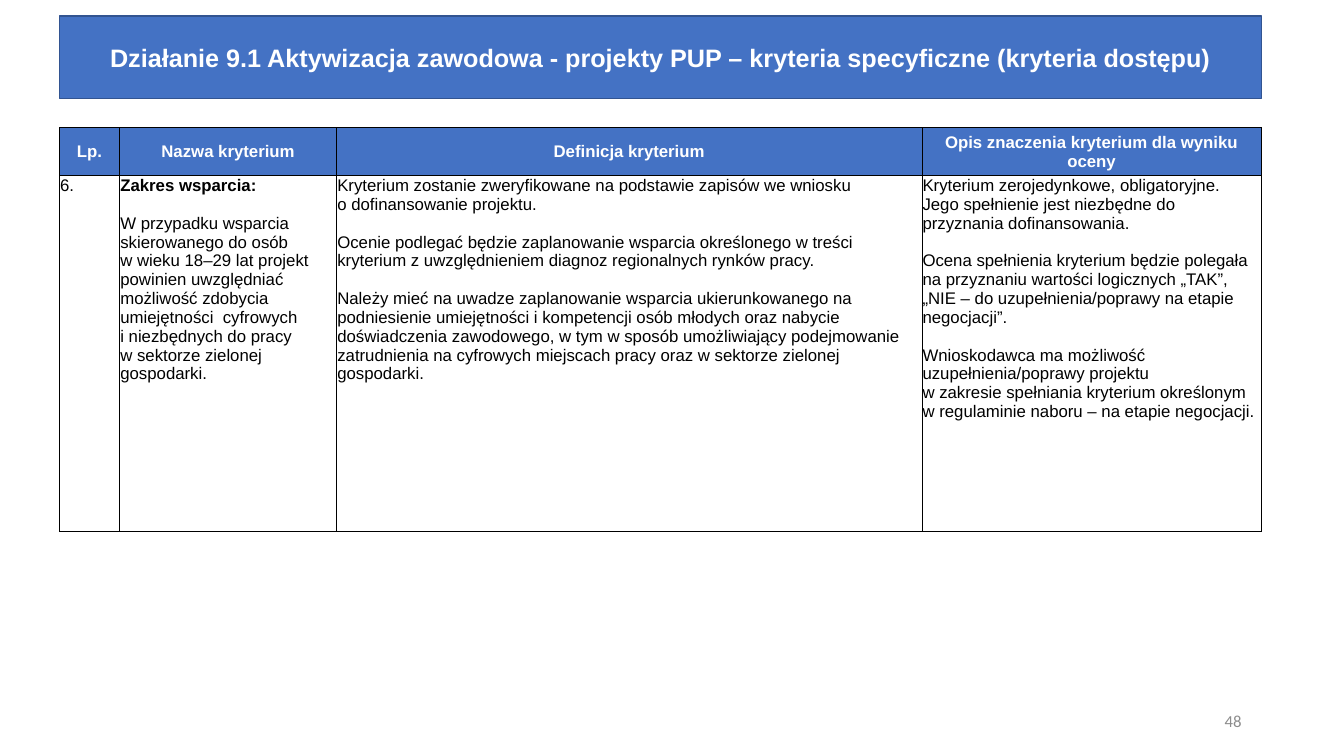
from lxml import etree
from pptx import Presentation
from pptx.dml.color import RGBColor
from pptx.enum.shapes import MSO_SHAPE as SHAPE
from pptx.enum.text import MSO_ANCHOR as ANCHOR, PP_ALIGN as ALIGN
from pptx.oxml.ns import qn
from pptx.util import Pt

BLUE, BLACK, WHITE = "4472C4", "000000", "FFFFFF"
LEFT = 42.5
COLUMNS = [43, 155, 418, 242.5]
ROWS = [34.5, 254]
PARAGRAPH_GAP = 13.5

HEADERS = ["Lp.", "Nazwa kryterium", "Definicja kryterium",
           "Opis znaczenia kryterium dla wyniku oceny"]
# Each cell is a list of paragraphs; a newline is a line break.
CRITERION = [
    ["6."],
    ["Zakres wsparcia:",
     "W przypadku wsparcia skierowanego do osób\nw wieku 18–29 lat projekt powinien "
     "uwzględniać możliwość zdobycia umiejętności  cyfrowych\ni niezbędnych do pracy "
     "\nw sektorze zielonej gospodarki."],
    ["Kryterium zostanie zweryfikowane na podstawie zapisów we wniosku "
     "\no dofinansowanie projektu.",
     "Ocenie podlegać będzie zaplanowanie wsparcia określonego w treści kryterium "
     "z uwzględnieniem diagnoz regionalnych rynków pracy.",
     "Należy mieć na uwadze zaplanowanie wsparcia ukierunkowanego na podniesienie "
     "umiejętności i kompetencji osób młodych oraz nabycie doświadczenia zawodowego, "
     "w tym w sposób umożliwiający podejmowanie zatrudnienia na cyfrowych miejscach "
     "pracy oraz w sektorze zielonej gospodarki."],
    ["Kryterium zerojedynkowe, obligatoryjne. Jego spełnienie jest niezbędne do "
     "przyznania dofinansowania.",
     "Ocena spełnienia kryterium będzie polegała na przyznaniu wartości logicznych "
     "„TAK”,\n„NIE – do uzupełnienia/poprawy na etapie negocjacji”.",
     "Wnioskodawca ma możliwość uzupełnienia/poprawy projektu \nw zakresie spełniania "
     "kryterium określonym w regulaminie naboru – na etapie negocjacji."],
]


def rgb(color):
    return RGBColor.from_string(color)


def write(p, text, size=12, font="Arial", color=BLACK, bold=False,
          align=ALIGN.LEFT, before=0):
    """Fill a paragraph, turning newlines into line breaks."""
    p.alignment = align
    p.space_before = Pt(before)
    for i, line in enumerate(text.split("\n")):
        if i:
            p.add_line_break()
        r = p.add_run()
        r.text = line
        r.font.size, r.font.name, r.font.bold = Pt(size), font, bold
        r.font.color.rgb = rgb(color)
    p.font.size = Pt(size)


def add_borders(cell, color=BLACK, width=0.5):
    tc_pr = cell._tc.get_or_add_tcPr()
    for side in ("a:lnL", "a:lnR", "a:lnT", "a:lnB"):
        ln = etree.SubElement(tc_pr, qn(side), w=str(Pt(width)))
        fill = etree.SubElement(ln, qn("a:solidFill"))
        etree.SubElement(fill, qn("a:srgbClr"), val=color)


class CriteriaSlide:
    def __init__(self, prs):
        self.slide = prs.slides.add_slide(prs.slide_layouts[6])
        self.shapes = self.slide.shapes

    def banner(self, text, x, y, w, h):
        sp = self.shapes.add_shape(SHAPE.RECTANGLE, Pt(x), Pt(y), Pt(w), Pt(h))
        sp.shadow.inherit = False
        sp.fill.solid()
        sp.fill.fore_color.rgb = rgb(BLUE)
        sp.line.color.rgb = rgb("325491")
        sp.line.width = Pt(1)
        tf = sp.text_frame
        tf.word_wrap = True
        tf.vertical_anchor = ANCHOR.MIDDLE
        write(tf.paragraphs[0], text, size=18, color=WHITE, bold=True,
              align=ALIGN.CENTER)

    def cell(self, cell, paragraphs, header):
        cell.margin_left = cell.margin_right = cell.margin_top = Pt(0.5)
        cell.margin_bottom = Pt(0)
        cell.vertical_anchor = ANCHOR.MIDDLE if header else ANCHOR.TOP
        add_borders(cell)
        if header:
            cell.fill.solid()
            cell.fill.fore_color.rgb = rgb(BLUE)
        else:
            cell.fill.background()
        tf = cell.text_frame
        for i, text in enumerate(paragraphs):
            p = tf.add_paragraph() if i else tf.paragraphs[0]
            write(p, text, color=WHITE if header else BLACK,
                  bold=header or text.endswith(":"),
                  align=ALIGN.CENTER if header else ALIGN.LEFT,
                  before=PARAGRAPH_GAP if i else 0)

    def table(self, rows, x, y):
        table = self.shapes.add_table(len(ROWS), len(COLUMNS), Pt(x), Pt(y),
                                      Pt(sum(COLUMNS)), Pt(sum(ROWS))).table
        table.horz_banding = False
        for column, width in zip(table.columns, COLUMNS):
            column.width = Pt(width)
        for i, (row, height) in enumerate(zip(table.rows, ROWS)):
            row.height = Pt(height)
            for cell, paragraphs in zip(row.cells, rows[i]):
                self.cell(cell, paragraphs, header=i == 0)

    def page_number(self, text, x, y, w, h):
        tf = self.shapes.add_textbox(Pt(x), Pt(y), Pt(w), Pt(h)).text_frame
        tf.word_wrap = True
        tf.vertical_anchor = ANCHOR.MIDDLE
        write(tf.paragraphs[0], text, font="Calibri", color="8C8C8C",
              align=ALIGN.RIGHT)


def main():
    prs = Presentation()
    prs.slide_width, prs.slide_height = Pt(960), Pt(540)
    s = CriteriaSlide(prs)
    s.banner("Działanie 9.1 Aktywizacja zawodowa - projekty PUP – kryteria "
             "specyficzne (kryteria dostępu)", LEFT, 11.5, sum(COLUMNS), 59)
    s.table([[[header] for header in HEADERS], CRITERION], LEFT, 91)
    s.page_number("48", 678, 500.5, 216, 29)
    prs.save("out.pptx")


if __name__ == "__main__":
    main()
